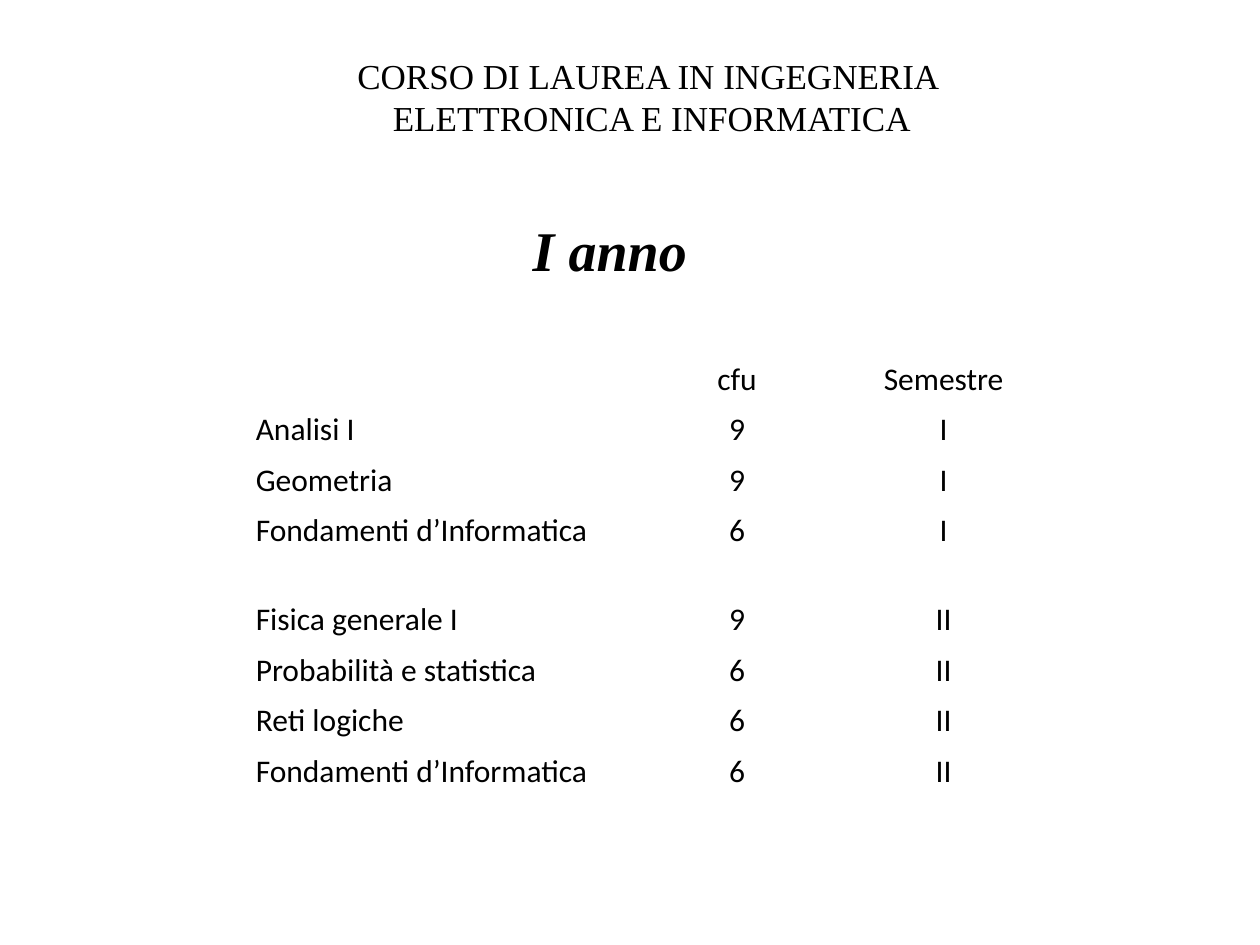
from pptx import Presentation
from pptx.dml.color import RGBColor
from pptx.enum.text import MSO_ANCHOR, MSO_AUTO_SIZE, PP_ALIGN
from pptx.util import Inches, Pt

BLACK = RGBColor(0x00, 0x00, 0x00)
LEFT, CENTER = PP_ALIGN.LEFT, PP_ALIGN.CENTER
BOTTOM = MSO_ANCHOR.BOTTOM
FIT_SHAPE = MSO_AUTO_SIZE.SHAPE_TO_FIT_TEXT
TITLE_FONT, TABLE_FONT = "Times New Roman", "Calibri"

COLUMN_WIDTHS = (3.39, 1.06, 2.22)
ROW_HEIGHT = 0.4
TERM_START_HEIGHT = 0.71
TERM_START_ROW = 4
COURSES = (
    ("", "cfu", "Semestre"),
    ("Analisi I", "9", "I"),
    ("Geometria", "9", "I"),
    ("Fondamenti d’Informatica", "6", "I"),
    ("Fisica generale I", "9", "II"),
    ("Probabilità e statistica", "6", "II"),
    ("Reti logiche", "6", "II"),
    ("Fondamenti d’Informatica", "6", "II"),
)


def style_paragraph(para, font_name, size, align):
    """Set the alignment, font, size and colour of a paragraph."""
    para.alignment = align
    para.font.name = font_name
    para.font.size = Pt(size)
    para.font.color.rgb = BLACK


def add_heading(page, bounds, text, size, align, emphasis=False):
    """Add an unwrapped text box with one paragraph per line of text."""
    box = page.shapes.add_textbox(*map(Inches, bounds))
    frame = box.text_frame
    frame.word_wrap = False
    frame.auto_size = FIT_SHAPE
    frame.text = text
    for para in frame.paragraphs:
        style_paragraph(para, TITLE_FONT, size, align)
        if emphasis:
            para.font.bold = para.font.italic = True


def fill_cell(cell, text, align):
    """Write a course table cell without a background."""
    cell.fill.background()
    cell.vertical_anchor = BOTTOM
    cell.text = text
    style_paragraph(cell.text_frame.paragraphs[0], TABLE_FONT, 18, align)


def add_course_table(page, left, top):
    """Add the course table, with a taller row opening the second term."""
    heights = [ROW_HEIGHT] * len(COURSES)
    heights[TERM_START_ROW] = TERM_START_HEIGHT
    table = page.shapes.add_table(
        len(COURSES), len(COLUMN_WIDTHS), Inches(left), Inches(top),
        Inches(sum(COLUMN_WIDTHS)), Inches(sum(heights)),
    ).table
    table.first_row = table.horz_banding = False
    for column, width in zip(table.columns, COLUMN_WIDTHS):
        column.width = Inches(width)
    for row, height, course in zip(table.rows, heights, COURSES):
        row.height = Inches(height)
        for cell, text, align in zip(row.cells, course, (LEFT, CENTER, CENTER)):
            fill_cell(cell, text, align)


def main():
    """Build and save the first-year course slide."""
    deck = Presentation()
    deck.slide_width, deck.slide_height = Inches(10), Inches(7.5)
    page = deck.slides.add_slide(deck.slide_layouts[6])
    add_heading(page, (4.13, 1.66, 1.44, 0.64), "I anno", 32, LEFT, emphasis=True)
    add_heading(
        page, (2.71, 0.38, 4.93, 0.77),
        "CORSO DI LAUREA IN INGEGNERIA \nELETTRONICA E INFORMATICA", 20, CENTER,
    )
    add_course_table(page, 1.93, 2.81)
    deck.save("out.pptx")


if __name__ == "__main__":
    main()
